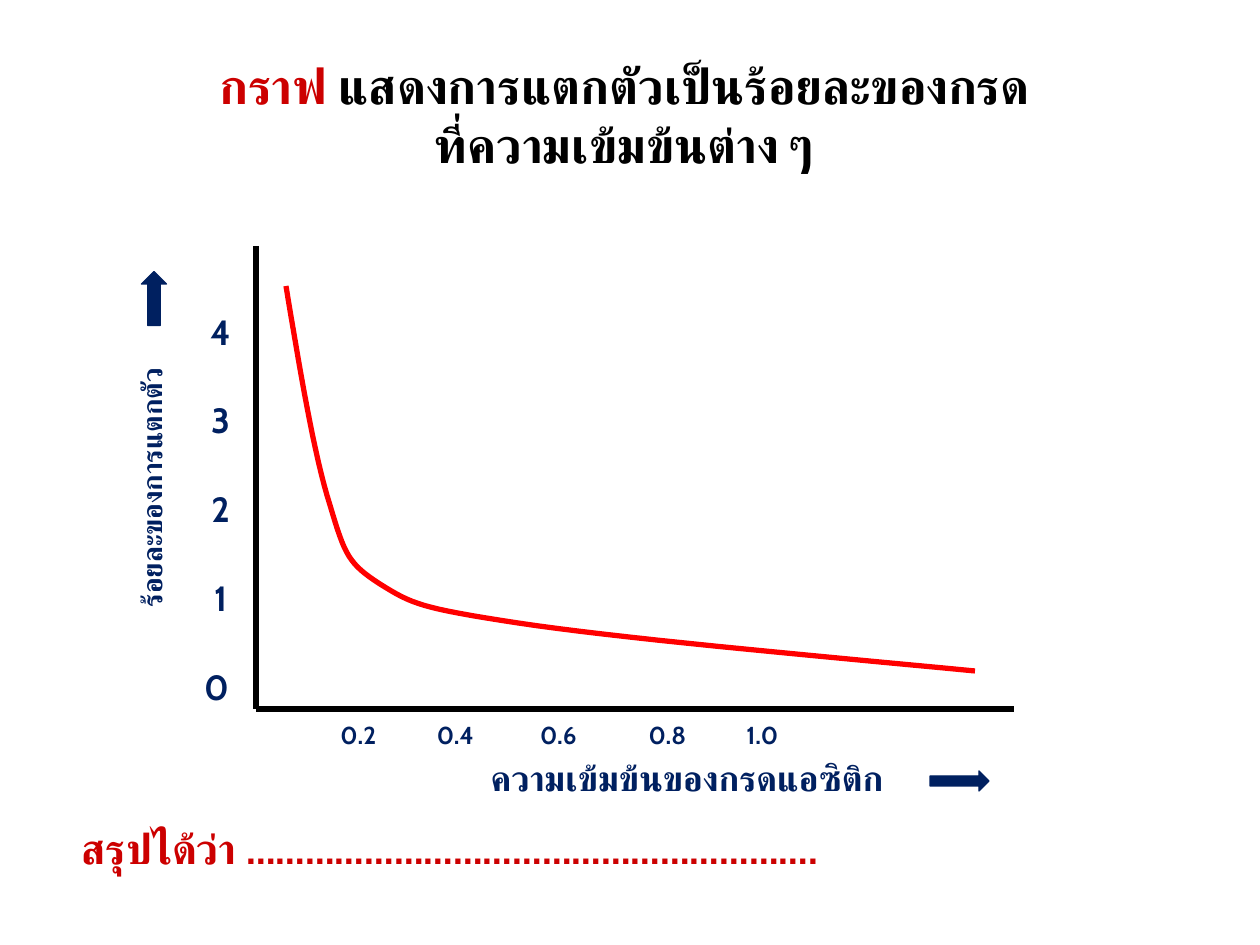
from pptx import Presentation
from pptx.dml.color import RGBColor
from pptx.enum.shapes import MSO_CONNECTOR, MSO_SHAPE
from pptx.enum.text import PP_ALIGN
from pptx.oxml.ns import qn
from pptx.util import Emu, Pt
from lxml.etree import SubElement

RED = RGBColor(0xCC, 0, 0)
CURVE = RGBColor(0xFF, 0, 0)
NAVY = RGBColor(0, 0x20, 0x60)
BLACK = RGBColor(0, 0, 0)
FONT = "Cabin"
LEFT, MID = PP_ALIGN.LEFT, PP_ALIGN.CENTER


def px(n):
    """Turn px (126 to the inch) into EMU."""
    return Emu(round(n * 914400 / 126))


def style(item, form):
    for name, value in form.items():
        setattr(item, name, value)


def add_run(para, words, size, color):
    run = para.add_run()
    run.text = words
    style(run.font, {"name": FONT, "size": Pt(size), "bold": True})
    run.font.color.rgb = color
    # Thai letters take the complex-script font
    SubElement(run.font._element, qn("a:cs"), typeface=FONT)


def add_text(slide, box, paras, size, align=LEFT, gap=0, turn=0):
    """Each paragraph is a list of (words, color); a newline breaks the line."""
    shape = slide.shapes.add_textbox(*map(px, box))
    shape.rotation = turn
    frame = shape.text_frame
    frame.word_wrap = True
    for i, parts in enumerate(paras):
        para = frame.add_paragraph() if i else frame.paragraphs[0]
        style(para, {"alignment": align, "space_before": Pt(gap if i else 0)})
        for words, color in parts:
            for j, line in enumerate(words.split("\n")):
                if j:
                    para.add_line_break()
                add_run(para, line, size, color)
    return frame


def add_tabs(para, stops):
    tabs = SubElement(para._p.get_or_add_pPr(), qn("a:tabLst"))
    for stop in stops:
        SubElement(tabs, qn("a:tab"), pos=str(px(stop)), algn="ctr")


def add_axis(slide, start, end):
    axis = slide.shapes.add_connector(
        MSO_CONNECTOR.STRAIGHT, *map(px, start + end))
    axis.line.color.rgb = BLACK
    axis.line.width = Pt(3)
    SubElement(axis._element.spPr, qn("a:effectLst"))


def add_arrow(slide, box, turn=0):
    arrow = slide.shapes.add_shape(MSO_SHAPE.RIGHT_ARROW, *map(px, box))
    arrow.rotation = turn
    arrow.shadow.inherit = False
    arrow.fill.solid()
    arrow.fill.fore_color.rgb = NAVY
    arrow.line.color.rgb = NAVY
    arrow.line.width = Pt(0.75)


def bezier(a, b, c, d, steps=16):
    """Points after a on one cubic curve."""
    for i in range(1, steps + 1):
        t = i / steps
        u = 1 - t
        yield tuple(u**3 * p + 3 * u * u * t * q + 3 * u * t * t * r + t**3 * s
                    for p, q, r, s in zip(a, b, c, d))


def add_curve(slide, knots):
    points = [p for i in range(0, len(knots) - 1, 3)
              for p in bezier(*knots[i:i + 4])]
    pen = slide.shapes.build_freeform(*map(px, knots[0]))
    pen.add_line_segments([(px(x), px(y)) for x, y in points], close=False)
    curve = pen.convert_to_shape()
    curve.shadow.inherit = False
    curve.fill.background()
    curve.line.color.rgb = CURVE
    curve.line.width = Pt(3)


def main():
    deck = Presentation()
    style(deck, {"slide_width": px(1260), "slide_height": px(945)})
    slide = deck.slides.add_slide(deck.slide_layouts[6])

    # Title and conclusion
    title = [("กราฟ", RED),
             (" แสดงการแตกตัวเป็นร้อยละของกรด\nที่ความเข้มข้นต่าง ๆ", BLACK)]
    add_text(slide, (29, 49, 1191, 131), [title], 28, MID)
    add_text(slide, (69, 816, 1191, 63),
             [[("สรุปได้ว่า ………………………………………………….", RED)]], 24)

    # Axes and curve
    origin = (256, 709)
    add_axis(slide, (256, 246), origin)
    add_axis(slide, (1014, 709), origin)
    add_curve(slide, [
        (286, 286), (300, 370), (314, 455), (330, 505),
        (345, 556), (349, 564), (380, 584),
        (412, 604), (420, 608), (518, 623),
        (617, 638), (796, 654), (975, 671)])

    # Scale of concentration
    marks = "\t0.2\t0.4\t0.6\t0.8\t1.0"
    scale = add_text(slide, (256, 714, 767, 43), [[(marks, NAVY)]], 14)
    add_tabs(scale.paragraphs[0], (90, 187, 290, 399, 494))

    # Scale of percentage
    add_text(slide, (186, 304, 69, 437),
             [[(n, NAVY)] for n in ("4", "3", "2", "1", "0 ")],
             20, MID, gap=26.7)

    # Axis names with arrows
    add_text(slide, (-1, 464, 305, 47), [[("ร้อยละของการแตกตัว", NAVY)]],
             16, MID, turn=270)
    add_arrow(slide, (127, 286, 54, 25), turn=270)
    add_text(slide, (386, 750, 610, 55),
             [[("ความเข้มข้นของกรดแอซิติก ", NAVY)]], 20, MID)
    add_arrow(slide, (930, 771, 59, 20))

    deck.save("out.pptx")


if __name__ == "__main__":
    main()
